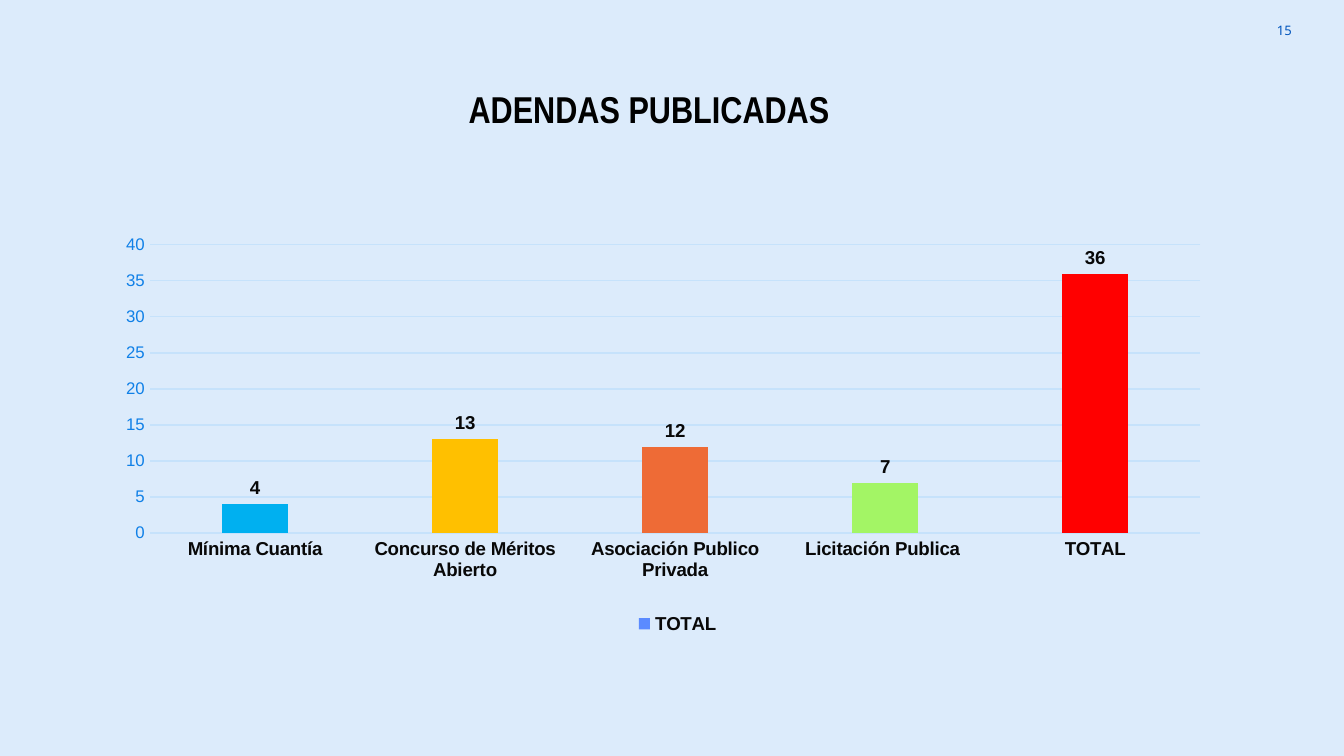
"""Build the slide with a column chart of published addenda."""
from dataclasses import dataclass
from typing import Any

from lxml import etree
from pptx import Presentation
from pptx import util as u
from pptx.chart import data as chart_data
from pptx.dml import color
from pptx.enum import chart as charts, text
from pptx.oxml import ns

WIDTH = u.Inches(10)
HEIGHT = u.Emu(WIDTH * 9 // 16)


@dataclass(frozen=True)
class Theme:
    background: str = "DCEBFB"
    title: str = "000000"
    number: str = "0054BC"
    label: str = "080808"
    scale: str = "1080E7"
    base: str = "073763"
    grid: str = "C6E2FB"
    series: str = "5B8BFF"
    title_font: str = "Arial Narrow"
    number_font: str = "Noto Sans"
    chart_font: str = "Arial"
    title_size: float = 20
    number_size: float = 7
    label_size: float = 10
    scale_size: float = 9
    line_width: float = 0.75


@dataclass(frozen=True)
class Area:
    """Place given in percent of the surrounding width and height."""
    left: float
    top: float
    width: float
    height: float

    def lengths(self) -> tuple[int, int, int, int]:
        return (int(WIDTH * self.left / 100), int(HEIGHT * self.top / 100),
                int(WIDTH * self.width / 100), int(HEIGHT * self.height / 100))


@dataclass(frozen=True)
class Bar:
    name: str
    value: int
    fill: str


THEME = Theme()
NUMBER_AREA = Area(91.1, 0.18, 6, 7.64)
TITLE_AREA = Area(33.7, 10.49, 29.2, 7.82)
CHART_AREA = Area(7.75, 22.58, 85.3, 62.04)
PLOT_AREA = Area(4, 15.8, 91.6, 61.5)
BARS = [
    Bar("Mínima Cuantía", 4, "00B0F0"),
    Bar("Concurso de Méritos Abierto", 13, "FFC000"),
    Bar("Asociación Publico Privada", 12, "EE6B36"),
    Bar("Licitación Publica ", 7, "A3F565"),
    Bar("TOTAL", 36, "FF0000"),
]


def rgb(value: str) -> color.RGBColor:
    return color.RGBColor.from_string(value)


def style_font(font: Any, name: str, size: float, fill: str, bold: bool = False) -> None:
    font.name, font.size, font.bold = name, u.Pt(size), bold
    font.color.rgb = rgb(fill)


def style_line(line: Any) -> None:
    line.color.rgb = rgb(THEME.grid)
    line.width = u.Pt(THEME.line_width)


def fill_solid(fill: Any, value: str) -> None:
    fill.solid()
    fill.fore_color.rgb = rgb(value)


def add_text(slide: Any, words: str, area: Area, *, font: str, size: float, fill: str,
             bold: bool = False, wrap: bool = True,
             align: Any = text.PP_ALIGN.CENTER, anchor: Any = text.MSO_ANCHOR.TOP) -> None:
    frame = slide.shapes.add_textbox(*area.lengths()).text_frame
    frame.word_wrap, frame.vertical_anchor = wrap, anchor
    para = frame.paragraphs[0]
    para.alignment = align
    span = para.add_run()
    span.text = words
    style_font(span.font, font, size, fill, bold)


def place_plot(chart: Any, area: Area) -> None:
    """Fix the inner plot area at its shares of the chart."""
    plot_area = chart.plots[0]._element.getparent()
    for old in plot_area.findall(ns.qn("c:layout")):
        plot_area.remove(old)
    layout = etree.Element(ns.qn("c:layout"))
    manual = etree.SubElement(layout, ns.qn("c:manualLayout"))
    settings = {"layoutTarget": "inner", "xMode": "edge", "yMode": "edge",
                "x": area.left / 100, "y": area.top / 100,
                "w": area.width / 100, "h": area.height / 100}
    for tag, value in settings.items():
        etree.SubElement(manual, ns.qn(f"c:{tag}")).set("val", str(value))
    plot_area.insert(0, layout)


def style_axes(chart: Any) -> None:
    for axis in (chart.category_axis, chart.value_axis):
        axis.major_tick_mark = axis.minor_tick_mark = charts.XL_TICK_MARK.NONE
    categories, values = chart.category_axis, chart.value_axis
    style_font(categories.tick_labels.font, THEME.chart_font, THEME.label_size,
               THEME.label, bold=True)
    style_line(categories.format.line)
    style_font(values.tick_labels.font, THEME.chart_font, THEME.scale_size, THEME.scale)
    values.tick_labels.number_format = "0"
    values.tick_labels.number_format_is_linked = False
    values.format.line.fill.background()
    style_line(values.major_gridlines.format.line)


def add_bar_chart(slide: Any, bars: list[Bar], area: Area) -> None:
    table = chart_data.CategoryChartData(number_format="0")
    table.categories = [bar.name for bar in bars]
    table.add_series("TOTAL", [bar.value for bar in bars])
    chart = slide.shapes.add_chart(
        charts.XL_CHART_TYPE.COLUMN_CLUSTERED, *area.lengths(), table).chart
    chart.has_title = False
    style_font(chart.font, THEME.chart_font, THEME.label_size, THEME.base)
    style_axes(chart)

    plot = chart.plots[0]
    plot.gap_width, plot.overlap, plot.vary_by_categories = 219, -27, False
    series = plot.series[0]
    fill_solid(series.format.fill, THEME.series)
    for index, bar in enumerate(bars):
        fill_solid(series.points[index].format.fill, bar.fill)
    labels = series.data_labels
    labels.show_value, labels.position = True, charts.XL_LABEL_POSITION.OUTSIDE_END
    labels.number_format, labels.number_format_is_linked = "0", False

    chart.has_legend = True
    chart.legend.position = charts.XL_LEGEND_POSITION.BOTTOM
    chart.legend.include_in_layout = False
    for part in (labels, chart.legend):
        style_font(part.font, THEME.chart_font, THEME.label_size, THEME.label, bold=True)
    place_plot(chart, PLOT_AREA)


def main() -> None:
    deck = Presentation()
    deck.slide_width, deck.slide_height = WIDTH, HEIGHT
    page = deck.slides.add_slide(deck.slide_layouts[6])
    fill_solid(page.background.fill, THEME.background)
    add_text(page, "15", NUMBER_AREA, font=THEME.number_font, size=THEME.number_size,
             fill=THEME.number, align=text.PP_ALIGN.RIGHT, anchor=text.MSO_ANCHOR.MIDDLE)
    add_text(page, "ADENDAS PUBLICADAS", TITLE_AREA, font=THEME.title_font,
             size=THEME.title_size, fill=THEME.title, bold=True, wrap=False)
    add_bar_chart(page, BARS, CHART_AREA)
    deck.save("out.pptx")


if __name__ == "__main__":
    main()
